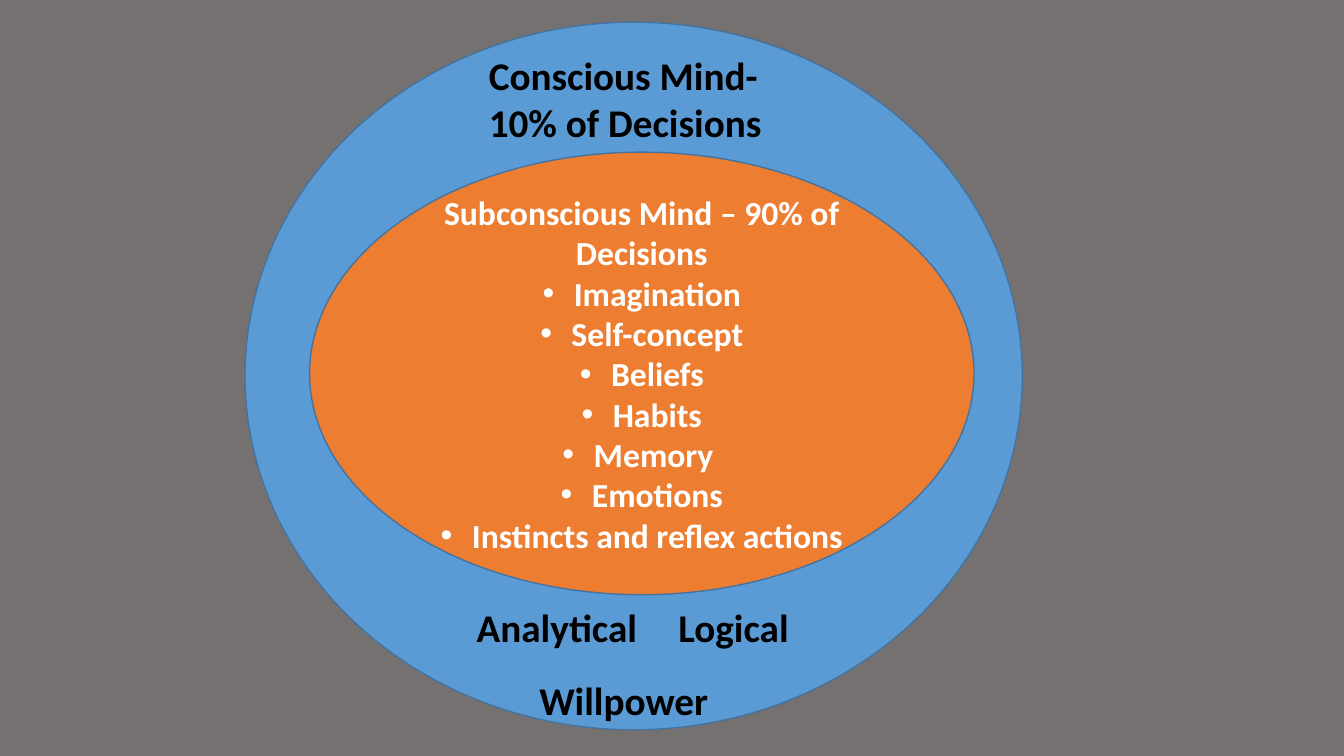
from dataclasses import dataclass

from lxml import etree
from pptx import Presentation
from pptx.dml.color import RGBColor
from pptx.enum.shapes import MSO_SHAPE
from pptx.enum.text import MSO_ANCHOR, PP_ALIGN
from pptx.oxml.ns import qn
from pptx.util import Emu, Pt

OVAL = MSO_SHAPE.OVAL
MIDDLE, TOP = MSO_ANCHOR.MIDDLE, MSO_ANCHOR.TOP
CENTER, LEFT = PP_ALIGN.CENTER, PP_ALIGN.LEFT
EMU_PER_PX = 9144
BULLET_INDENT = 31
FONT = "Calibri"
BACKGROUND, OUTLINE = "767171", "43739E"
BLACK, WHITE = "000000", "FFFFFF"


@dataclass(frozen=True)
class Box:
    left: int
    top: int
    width: int
    height: int

    def emu(self) -> tuple[Emu, ...]:
        return tuple(px(n) for n in (self.left, self.top, self.width, self.height))


@dataclass(frozen=True)
class Label:
    text: str
    box: Box


CONSCIOUS_OVAL = Box(243, 22, 771, 702)
SUBCONSCIOUS_OVAL = Box(307, 151, 659, 439)
SUBCONSCIOUS_TITLE = "Subconscious Mind – 90% of Decisions"
SUBCONSCIOUS_PARTS = [
    "Imagination", "Self-concept", "Beliefs", "Habits",
    "Memory ", "Emotions", "Instincts and reflex actions",
]
CONSCIOUS_LABELS = [
    Label("Conscious Mind- 10% of Decisions", Box(475, 46, 343, 104)),
    Label("Analytical\tLogical", Box(463, 594, 346, 88)),
    Label("Willpower", Box(525, 666, 215, 57)),
]


def px(length: int) -> Emu:
    return Emu(length * EMU_PER_PX)


def color(value: str) -> RGBColor:
    return RGBColor.from_string(value)


def add_bullet(paragraph) -> None:
    properties = paragraph._p.get_or_add_pPr()
    properties.set("marL", str(px(BULLET_INDENT)))
    properties.set("indent", str(px(-BULLET_INDENT)))
    etree.SubElement(properties, qn("a:buFont")).set("typeface", "Arial")
    etree.SubElement(properties, qn("a:buChar")).set("char", "•")


def write_text(shape, lines: list[str], *, size: int, font_color: str,
               align=LEFT, anchor=TOP, bulleted_from: int | None = None) -> None:
    frame = shape.text_frame
    frame.word_wrap = True
    frame.vertical_anchor = anchor
    for index, line in enumerate(lines):
        paragraph = frame.add_paragraph() if index else frame.paragraphs[0]
        paragraph.alignment = align
        if bulleted_from is not None and index >= bulleted_from:
            add_bullet(paragraph)
        run = paragraph.add_run()
        run.text = line
        run.font.name = FONT
        run.font.size = Pt(size)
        run.font.bold = True
        run.font.color.rgb = color(font_color)


def add_oval(slide, box: Box, fill: str):
    shape = slide.shapes.add_shape(OVAL, *box.emu())
    shape.shadow.inherit = False
    shape.fill.solid()
    shape.fill.fore_color.rgb = color(fill)
    shape.line.color.rgb = color(OUTLINE)
    shape.line.width = Pt(1)
    return shape


def add_label(slide, label: Label) -> None:
    text_box = slide.shapes.add_textbox(*label.box.emu())
    write_text(text_box, [label.text], size=28, font_color=BLACK)


def main() -> None:
    """Build the slide of the conscious and subconscious mind."""
    presentation = Presentation()
    presentation.slide_width, presentation.slide_height = px(1333), px(750)
    slide = presentation.slides.add_slide(presentation.slide_layouts[6])
    slide.background.fill.solid()
    slide.background.fill.fore_color.rgb = color(BACKGROUND)

    add_oval(slide, CONSCIOUS_OVAL, "5B9BD5")
    subconscious = add_oval(slide, SUBCONSCIOUS_OVAL, "ED7D31")
    write_text(subconscious, [SUBCONSCIOUS_TITLE, *SUBCONSCIOUS_PARTS], size=24,
               font_color=WHITE, align=CENTER, anchor=MIDDLE, bulleted_from=1)
    for label in CONSCIOUS_LABELS:
        add_label(slide, label)
    presentation.save("out.pptx")


if __name__ == "__main__":
    main()
